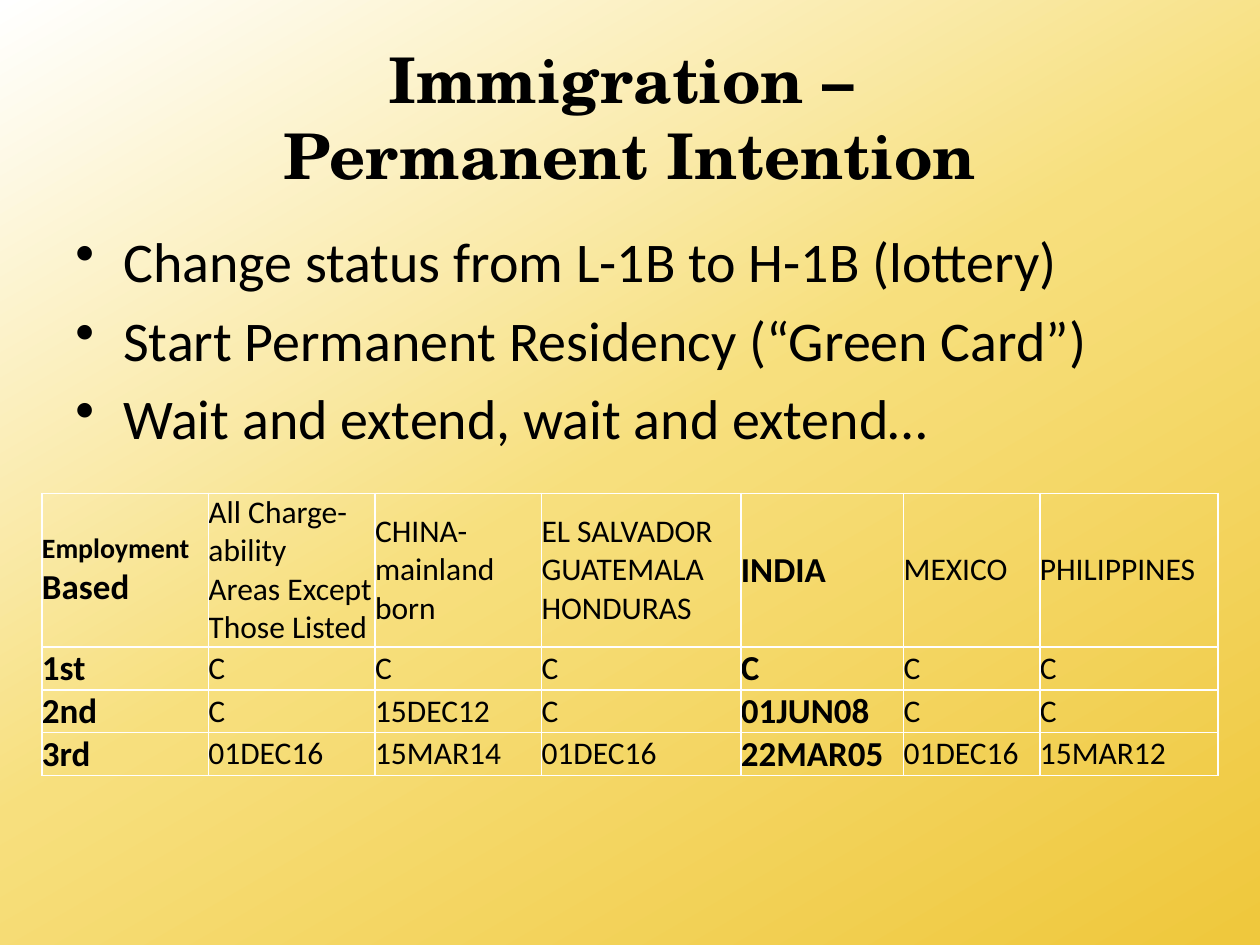
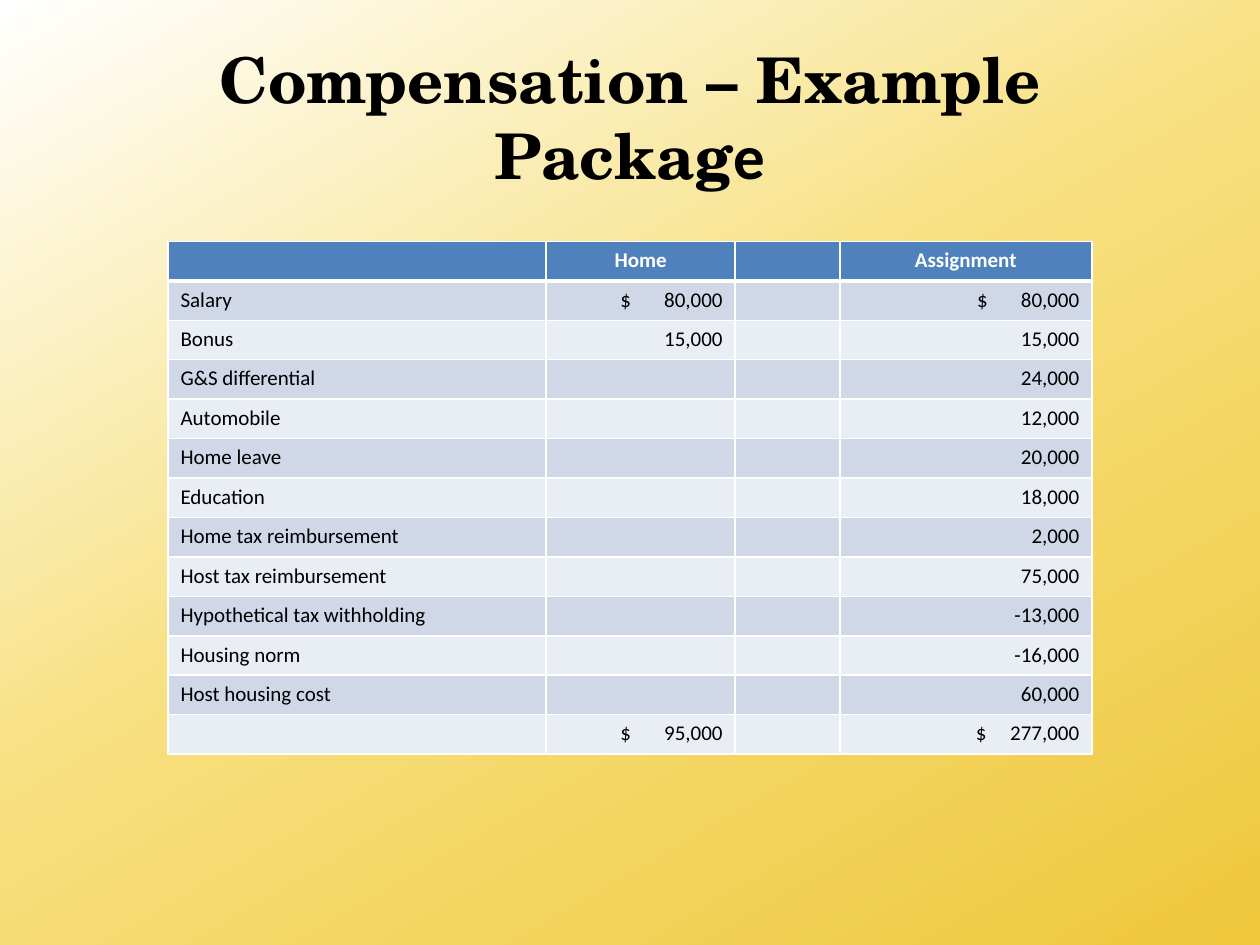
from dataclasses import dataclass
from typing import Any, NamedTuple

from lxml import etree
from pptx import Presentation
from pptx.dml.color import RGBColor
from pptx.enum.text import MSO_ANCHOR, PP_ALIGN
from pptx.oxml.ns import qn
from pptx.util import Emu, Inches, Pt

LEFT, CENTER, RIGHT = PP_ALIGN.LEFT, PP_ALIGN.CENTER, PP_ALIGN.RIGHT
TOP, MIDDLE = MSO_ANCHOR.TOP, MSO_ANCHOR.MIDDLE
SLIDE_WIDTH, SLIDE_HEIGHT = Inches(10), Inches(7.5)


@dataclass(frozen=True)
class Theme:
    title_font: str = "TeX Gyre Schola"
    body_font: str = "Calibri"
    ink: str = "000000"
    white: str = "FFFFFF"
    header_fill: str = "4F81BD"
    bands: tuple[str, str] = ("D0D8E8", "E9EDF4")
    backdrop: tuple[tuple[int, str], ...] = ((0, "FFFFFF"), (49, "F7DF7D"), (99, "EFC83D"))
    backdrop_angle: int = 300
    title_size: float = 36
    bullet_size: float = 32
    key_size: float = 20
    visa_size: float = 18
    label_size: float = 16
    pay_size: float = 12
    space_width: float = 2.7
    rule: float = 1
    heavy_rule: float = 3


THEME = Theme()


class Area(NamedTuple):
    left: float
    top: float
    width: float
    height: float

    def emu(self) -> tuple[Emu, ...]:
        spans = (SLIDE_WIDTH, SLIDE_HEIGHT) * 2
        return tuple(Emu(round(share * span)) for share, span in zip(self, spans))


class Span(NamedTuple):
    text: str
    size: float
    bold: bool = False
    font: str = THEME.body_font
    color: str = THEME.ink
    spacing: float = 0


@dataclass(frozen=True)
class CellStyle:
    align: Any = LEFT
    anchor: Any = TOP
    inset: tuple[float, float] = (0.1, 0.05)
    fill: str | None = None
    top_rule: float = THEME.rule
    bottom_rule: float = THEME.rule


TITLE_AREA = Area(0.05, 0.04, 0.9, 1 / 6)
BULLET_AREA = Area(0.05, 0.2333, 0.9, 0.66)
VISA_AREA = Area(0.0333, 0.522, 0.9333, 0.2987)
PAY_AREA = Area(0.1333, 0.2555, 0.7333, 0.5427)

VISA_COLUMNS = (1.32, 1.32, 1.32, 1.58, 1.29, 1.08, 1.41)
VISA_ROWS = (1.22, 0.34, 0.34, 0.34)
PAY_COLUMNS = (3, 1.5, 0.83, 2)
KEY_COLUMNS = (0, 4)

STEPS = (
    "Change status from L-1B to H-1B (lottery)",
    "Start Permanent Residency (“Green Card”)",
    "Wait and extend, wait and extend…",
)
VISA_DATES = (
    ("Employment\nBased", "All Charge-\nability\nAreas Except\nThose Listed",
     "CHINA-\nmainland\nborn", "EL SALVADOR\nGUATEMALA\nHONDURAS",
     "INDIA", "MEXICO", "PHILIPPINES"),
    ("1st", "C", "C", "C", "C", "C", "C"),
    ("2nd", "C", "15DEC12", "C", "01JUN08", "C", "C"),
    ("3rd", "01DEC16", "15MAR14", "01DEC16", "22MAR05", "01DEC16", "15MAR12"),
)
PACKAGE = (
    ("", "Home", "Assignment"),
    ("Salary", "$ 80,000", "$ 80,000"),
    ("Bonus", "15,000", "15,000"),
    ("G&S differential", "", "24,000"),
    ("Automobile", "", "12,000"),
    ("Home leave", "", "20,000"),
    ("Education", "", "18,000"),
    ("Home tax reimbursement", "", "2,000"),
    ("Host tax reimbursement", "", "75,000"),
    ("Hypothetical tax withholding", "", "-13,000"),
    ("Housing norm", "", "-16,000"),
    ("Host housing cost", "", "60,000"),
    ("", "$ 95,000", "$ 277,000"),
)


def apply(target: Any, values: dict[str, Any]) -> None:
    for name, value in values.items():
        setattr(target, name, value)


def write(paragraph: Any, spans: list[Span], align: Any = LEFT) -> None:
    paragraph.alignment = align
    for span in spans:
        for index, line in enumerate(span.text.split("\n")):
            if index:
                paragraph.add_line_break()
            if not line:
                continue
            run = paragraph.add_run()
            run.text = line
            apply(run.font, {"name": span.font, "size": Pt(span.size), "bold": span.bold})
            run.font.color.rgb = RGBColor.from_string(span.color)
            if span.spacing:
                run.font._element.set("spc", str(round(span.spacing * 100)))


def add_text_frame(slide: Any, area: Area, anchor: Any) -> Any:
    frame = slide.shapes.add_textbox(*area.emu()).text_frame
    apply(frame, {"word_wrap": True, "vertical_anchor": anchor})
    return frame


def add_titled_slide(deck: Any, title: list[tuple[str, str]]) -> Any:
    slide = deck.slides.add_slide(deck.slide_layouts[6])
    fill = slide.background.fill
    fill.gradient()
    fill.gradient_angle = THEME.backdrop_angle
    stops = slide.element.find(".//" + qn("a:gsLst"))
    for stop in list(stops):
        stops.remove(stop)
    for percent, color in THEME.backdrop:
        stop = etree.SubElement(stops, qn("a:gs"), pos=str(percent * 1000))
        etree.SubElement(stop, qn("a:srgbClr"), val=color)
    frame = add_text_frame(slide, TITLE_AREA, MIDDLE)
    spans = [Span(text, THEME.title_size, True, font) for text, font in title]
    write(frame.paragraphs[0], spans, CENTER)
    return slide


def add_steps(slide: Any) -> None:
    frame = add_text_frame(slide, BULLET_AREA, TOP)
    for index, step in enumerate(STEPS):
        paragraph = frame.add_paragraph() if index else frame.paragraphs[0]
        write(paragraph, [Span(step, THEME.bullet_size)])
        properties = paragraph._p.get_or_add_pPr()
        indent = Inches(0.38)
        apply_xml = {"marL": indent, "indent": -indent}
        for name, value in apply_xml.items():
            properties.set(name, str(value))
        before = etree.SubElement(properties, qn("a:spcBef"))
        etree.SubElement(before, qn("a:spcPct"), val="20000")
        etree.SubElement(properties, qn("a:buChar"), char="•")


def add_grid(slide: Any, area: Area, columns: tuple[float, ...], rows: tuple[float, ...]) -> Any:
    box = area.emu()
    table = slide.shapes.add_table(len(rows), len(columns), *box).table
    apply(table, {"first_row": False, "horz_banding": False})
    for column, share in zip(table.columns, columns):
        column.width = Emu(round(box[2] * share / sum(columns)))
    for row, share in zip(table.rows, rows):
        row.height = Emu(round(box[3] * share / sum(rows)))
    return table


def fill_cell(cell: Any, spans: list[Span], style: CellStyle) -> None:
    across, down = map(Inches, style.inset)
    apply(cell, {"margin_left": across, "margin_right": across, "margin_top": down,
                 "margin_bottom": down, "vertical_anchor": style.anchor})
    if style.fill:
        cell.fill.solid()
        cell.fill.fore_color.rgb = RGBColor.from_string(style.fill)
    else:
        cell.fill.background()
    properties = cell._tc.get_or_add_tcPr()
    rules = {"a:lnL": THEME.rule, "a:lnR": THEME.rule,
             "a:lnT": style.top_rule, "a:lnB": style.bottom_rule}
    for index, (edge, width) in enumerate(rules.items()):
        line = etree.Element(qn(edge), w=str(Pt(width)))
        paint = etree.SubElement(line, qn("a:solidFill"))
        etree.SubElement(paint, qn("a:srgbClr"), val=THEME.white)
        properties.insert(index, line)
    paragraph = cell.text_frame.paragraphs[0]
    write(paragraph, spans, style.align)
    if not any(span.text for span in spans):
        etree.SubElement(paragraph._p, qn("a:endParaRPr"), sz=str(round(THEME.pay_size * 100)))


def add_visa_dates(slide: Any) -> None:
    table = add_grid(slide, VISA_AREA, VISA_COLUMNS, VISA_ROWS)
    style = CellStyle(anchor=MIDDLE, inset=(0, 0))
    for row, entries in enumerate(VISA_DATES):
        for column, entry in enumerate(entries):
            key = column in KEY_COLUMNS
            spans = [Span(entry, THEME.key_size if key else THEME.visa_size, key)]
            if (row, column) == (0, 0):
                label, rest = entry.split("\n")
                spans = [Span(label + "\n", THEME.label_size, True),
                         Span(rest, THEME.key_size, True)]
            fill_cell(table.cell(row, column), spans, style)


def amount_spans(entry: str) -> list[Span]:
    sign, space, digits = entry.partition(" ")
    spaces = 7 - 2 * (len(digits) - len("80,000"))
    return [Span(sign, THEME.pay_size),
            Span(space, THEME.pay_size, spacing=(spaces - 1) * THEME.space_width),
            Span(digits, THEME.pay_size)]


def add_package(slide: Any) -> None:
    table = add_grid(slide, PAY_AREA, PAY_COLUMNS, (1,) * len(PACKAGE))
    for row, (item, home, assignment) in enumerate(PACKAGE):
        header = row == 0
        for column, entry in enumerate((item, home, "", assignment)):
            style = CellStyle(
                align=CENTER if header else RIGHT if column else LEFT,
                fill=THEME.header_fill if header else THEME.bands[(row - 1) % 2],
                top_rule=THEME.heavy_rule if row == 1 else THEME.rule,
                bottom_rule=THEME.heavy_rule if header else THEME.rule,
            )
            if header:
                spans = [Span(entry, THEME.pay_size, True, color=THEME.white)]
            elif entry.startswith("$"):
                spans = amount_spans(entry)
            else:
                spans = [Span(entry, THEME.pay_size)]
            fill_cell(table.cell(row, column), spans, style)


def main() -> None:
    deck = Presentation()
    apply(deck, {"slide_width": SLIDE_WIDTH, "slide_height": SLIDE_HEIGHT})
    immigration = add_titled_slide(
        deck, [("Immigration – \nPermanent Intention", THEME.title_font)])
    add_steps(immigration)
    add_visa_dates(immigration)
    compensation = add_titled_slide(
        deck, [("Compensation – Example Packag", THEME.title_font), ("e", THEME.body_font)])
    add_package(compensation)
    deck.save("out.pptx")


if __name__ == "__main__":
    main()
